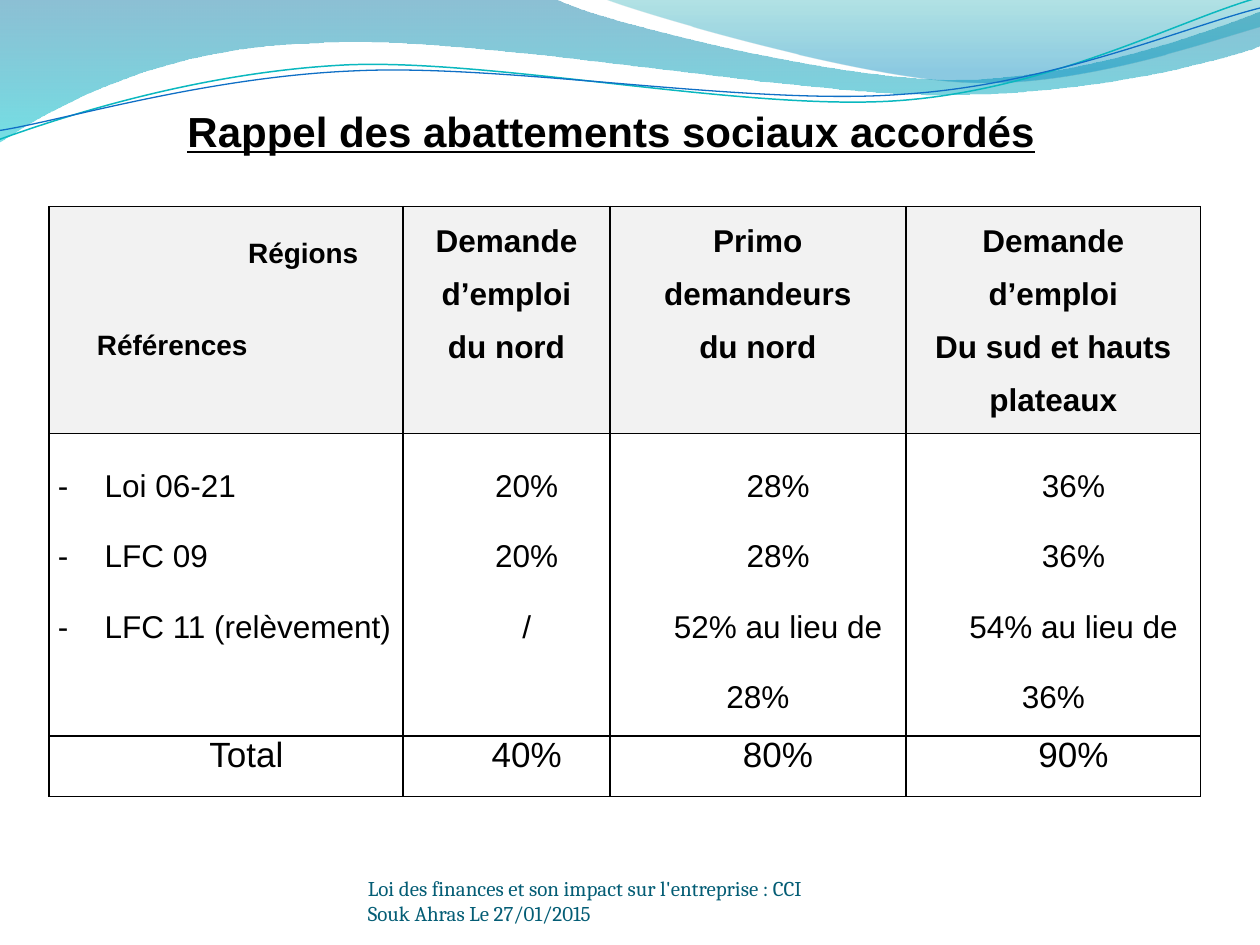
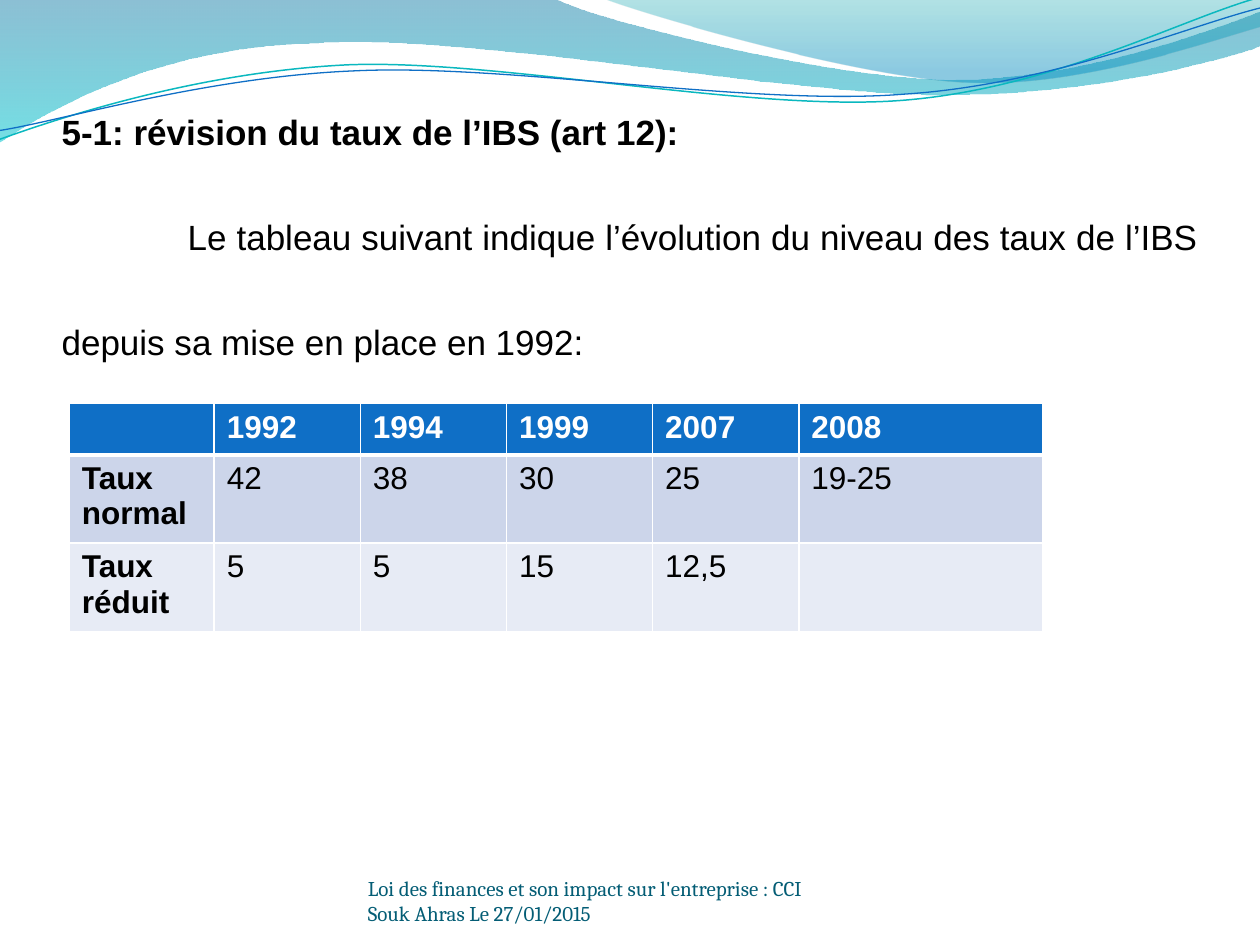
from lxml.etree import SubElement
from pptx import Presentation
from pptx.dml.color import RGBColor
from pptx.enum.text import MSO_ANCHOR as Anchor, PP_ALIGN as Align
from pptx.oxml import parse_xml
from pptx.oxml.ns import nsdecls, qn
from pptx.util import Inches, Pt

COLORS = {
    "black": "000000", "white": "FFFFFF", "blue": "0F6FC6", "teal": "0AB8BF",
    "footer": "045D75", "header": "F2F2F2", "band_dark": "CCD5EA", "band_light": "E7EBF5",
    "wave_top": "0074A1", "wave_bottom": "00C6CF", "crest_top": "00A1A9", "crest_bottom": "008BBF",
}
BASE_FONT = {"name": "Arial", "size": Pt(18), "bold": False}
FOOTER = "Loi des finances et son impact sur l'entreprise : CCI Souk Ahras Le 27/01/2015"

WAVE = [
    [(0, 0)], [(4.4, -0.01)],
    [(4.76, 0.17), (6.64, 0.63), (7.58, 0.63)],
    [(8.53, 0.63), (9.58, 0.26), (10, 0.09)],
    [(10.01, 0.36)],
    [(9.83, 0.44), (8.7, 0.76), (7.46, 0.75)],
    [(6.22, 0.75), (3.82, 0.28), (2.57, 0.34)],
    [(1.29, 0.36), (0.46, 0.83), (-0.01, 1.13)],
]
CREST = [
    [(4.79, -0.01)],
    [(5.09, 0.11), (6.82, 0.62), (7.69, 0.65)],
    [(8.56, 0.69), (9.61, 0.32), (10, 0.21)],
    [(10, 0)],
]
TEAL_LINE = [
    [(-0.02, 0.87)],
    [(0.47, 0.72), (1.58, 0.41), (2.77, 0.41)],
    [(3.95, 0.42), (5.91, 0.93), (7.12, 0.9)],
    [(8.32, 0.87), (9.39, 0.36), (10, 0.22)],
]
BLUE_LINE = [
    [(-0.02, 0.8)],
    [(0.46, 0.75), (1.64, 0.45), (2.83, 0.46)],
    [(4.03, 0.46), (5.96, 0.89), (7.16, 0.85)],
    [(8.35, 0.83), (9.42, 0.42), (10.02, 0.3)],
]


def rgb(name):
    return RGBColor.from_string(COLORS[name])


def apply(target, values):
    for name, value in values.items():
        setattr(target, name, value)


def add_outline(page, segments, closed):
    points = [(Inches(x), Inches(y)) for segment in segments for x, y in segment]
    builder = page.shapes.build_freeform(*points[0])
    builder.add_line_segments(points[1:], close=closed)
    shape = builder.convert_to_shape()
    shape.shadow.inherit = False
    lines = iter(list(shape._element.iter(qn("a:lnTo"))))
    for segment in segments[1:]:
        first, *others = [next(lines) for _ in segment]
        if others:
            first.tag = qn("a:cubicBezTo")
        for other in others:
            first.append(other[0])
            other.getparent().remove(other)
    return shape


def add_wave(page, segments, stops):
    shape = add_outline(page, segments, True)
    shape.line.fill.background()
    marks = "".join(
        f'<a:gs pos="{place * 1000}"><a:srgbClr val="{COLORS[color]}">'
        f'<a:alpha val="{opacity * 1000}"/></a:srgbClr></a:gs>'
        for place, color, opacity in stops
    )
    gradient = parse_xml(
        f'<a:gradFill {nsdecls("a")} rotWithShape="1"><a:gsLst>{marks}</a:gsLst>'
        '<a:lin ang="5400000" scaled="0"/></a:gradFill>'
    )
    shape._element.spPr.find(qn("a:custGeom")).addnext(gradient)


def add_curve(page, segments, color, width):
    shape = add_outline(page, segments, False)
    shape.rotation = 357.3
    shape.fill.background()
    shape.line.color.rgb = rgb(color)
    shape.line.width = Pt(width)


def write(para, text, font=None, layout=None, color="black", left=0, indent=0, bullet=None):
    span = para.add_run()
    span.text = text
    apply(span.font, {**BASE_FONT, **(font or {})})
    span.font.color.rgb = rgb(color)
    apply(para, layout or {})
    props = para._p.get_or_add_pPr()
    props.set("marL", str(Inches(left)))
    props.set("indent", str(Inches(indent)))
    if bullet:
        SubElement(props, qn("a:buFont")).set("typeface", BASE_FONT["name"])
        SubElement(props, qn("a:buChar")).set("char", bullet)


def write_lines(frame, lines, **style):
    for number, line in enumerate(lines):
        para = frame.add_paragraph() if number else frame.paragraphs[0]
        write(para, line, **style)


def add_text_box(page, place, frame_format):
    box = page.shapes.add_textbox(*map(Inches, place))
    apply(box.text_frame, {"word_wrap": True, **frame_format})
    return box.text_frame


def add_grid(page, left, top, widths, heights):
    frame = page.shapes.add_table(
        len(heights), len(widths), *map(Inches, (left, top, sum(widths), sum(heights))))
    table = frame.table
    apply(table, {"first_row": False, "horz_banding": False})
    for column, width in zip(table.columns, widths):
        column.width = Inches(width)
    for row, height in zip(table.rows, heights):
        row.height = Inches(height)
    return table


def style_cell(cell, fill, border, top=1, bottom=1):
    props = cell._tc.get_or_add_tcPr()
    for side, width in (("L", 1), ("R", 1), ("T", top), ("B", bottom)):
        props.append(parse_xml(
            f'<a:ln{side} {nsdecls("a")} w="{Pt(width)}"><a:solidFill>'
            f'<a:srgbClr val="{COLORS[border]}"/></a:solidFill></a:ln{side}>'))
    if fill:
        cell.fill.solid()
        cell.fill.fore_color.rgb = rgb(fill)
    else:
        cell.fill.background()


def add_backdrop(page):
    add_wave(page, WAVE, [(0, "wave_top", 45), (100, "wave_bottom", 55)])
    add_wave(page, CREST, [(0, "crest_top", 30), (80, "crest_bottom", 45)])
    add_curve(page, TEAL_LINE, "teal", 0.85)
    add_curve(page, BLUE_LINE, "blue", 0.75)
    for shape in list(page.shapes):
        page.slide_layout.shapes._spTree.append(shape._element)


def add_footer(page):
    margins = dict.fromkeys(("margin_left", "margin_top", "margin_right", "margin_bottom"), 0)
    frame = add_text_box(page, (2.92, 6.95, 3.67, 0.4), {"vertical_anchor": Anchor.BOTTOM, **margins})
    write(frame.paragraphs[0], FOOTER, {"name": "Cambria", "size": Pt(12)}, color="footer")


def add_allowance_table(page):
    rows = [
        [[], ["Demande d’emploi", "du nord"], ["Primo demandeurs", "du nord"],
         ["Demande d’emploi", "Du sud et hauts plateaux"]],
        [["Loi 06-21", "LFC 09", "LFC 11 (relèvement)"], ["20%", "20%", "/"],
         ["28%", "28%", "52% au lieu de 28%"], ["36%", "36%", "54% au lieu de 36%"]],
        [["Total"], ["40%"], ["80%"], ["90%"]],
    ]
    centred = {"alignment": Align.CENTER}
    row_styles = [
        {"font": {"bold": True}, "layout": {**centred, "line_spacing": 1.5}},
        {"layout": {**centred, "line_spacing": 2.0}, "indent": 0.32},
        {"font": {"size": Pt(20)}, "layout": centred, "indent": 0.32},
    ]
    references = {"layout": {"alignment": Align.JUSTIFY, "line_spacing": 2.0},
                  "left": 0.37, "indent": -0.37, "bullet": "-"}
    margins = {"margin_left": Inches(0.07), "margin_right": Inches(0.07),
               "margin_top": 0, "margin_bottom": 0}
    table = add_grid(page, 0.39, 1.64, [2.81, 1.64, 2.35, 2.34], [1.8, 2.4, 0.48])
    for r, row in enumerate(rows):
        for c, lines in enumerate(row):
            cell = table.cell(r, c)
            apply(cell, margins)
            style_cell(cell, None if r else "header", "black")
            write_lines(cell.text_frame, lines, **(references if (r, c) == (1, 0) else row_styles[r]))
    corner = table.cell(0, 0)
    corner.margin_top = Inches(0.25)
    label_font = {"size": Pt(16), "bold": True}
    write(corner.text_frame.paragraphs[0], "Régions", label_font, left=1.51)
    write(corner.text_frame.add_paragraph(), "Références", label_font,
          {"space_before": Pt(35)}, left=0.31)


def add_rate_table(page):
    rows = [
        ["", "1992", "1994", "1999", "2007", "2008"],
        ["Taux normal", "42", "38", "30", "25", "19-25"],
        ["Taux réduit", "5", "5", "15", "12,5", ""],
    ]
    fills = ["blue", "band_dark", "band_light"]
    table = add_grid(page, 0.55, 3.2, [1.15] + [1.16] * 4 + [1.94], [0.41, 0.7, 0.7])
    for r, row in enumerate(rows):
        for c, text in enumerate(row):
            cell = table.cell(r, c)
            style_cell(cell, fills[r], "white", top=3 if r == 1 else 1, bottom=1 if r else 3)
            if text:
                write(cell.text_frame.paragraphs[0], text, {"bold": r == 0 or c == 0},
                      color="black" if r else "white")


def build_allowances(page):
    frame = add_text_box(page, (0.63, 0.78, 8.12, 0.51), {"vertical_anchor": Anchor.MIDDLE})
    write(frame.paragraphs[0], "Rappel des abattements sociaux accordés",
          {"size": Pt(24), "bold": True, "underline": True}, {"alignment": Align.CENTER}, indent=0.32)
    add_allowance_table(page)
    add_footer(page)


def build_rates(page):
    frame = add_text_box(page, (0.39, 0.38, 9.22, 3.32),
                         {"vertical_anchor": Anchor.TOP, "margin_top": 0})
    layout = {"alignment": Align.JUSTIFY, "line_spacing": 2.5}
    write(frame.paragraphs[0], "5-1: révision du taux de l’IBS (art 12):",
          {"size": Pt(20), "bold": True}, layout)
    write(frame.add_paragraph(),
          "Le tableau suivant indique l’évolution du niveau des taux de l’IBS "
          "depuis sa mise en place en 1992:", {"size": Pt(20)}, layout, indent=1)
    add_rate_table(page)
    add_footer(page)


def main():
    deck = Presentation()
    apply(deck, {"slide_width": Inches(10), "slide_height": Inches(7.5)})
    blank = deck.slide_layouts[6]
    allowances, rates = [deck.slides.add_slide(blank) for _ in range(2)]
    add_backdrop(allowances)
    build_allowances(allowances)
    build_rates(rates)
    deck.save("out.pptx")


if __name__ == "__main__":
    main()
